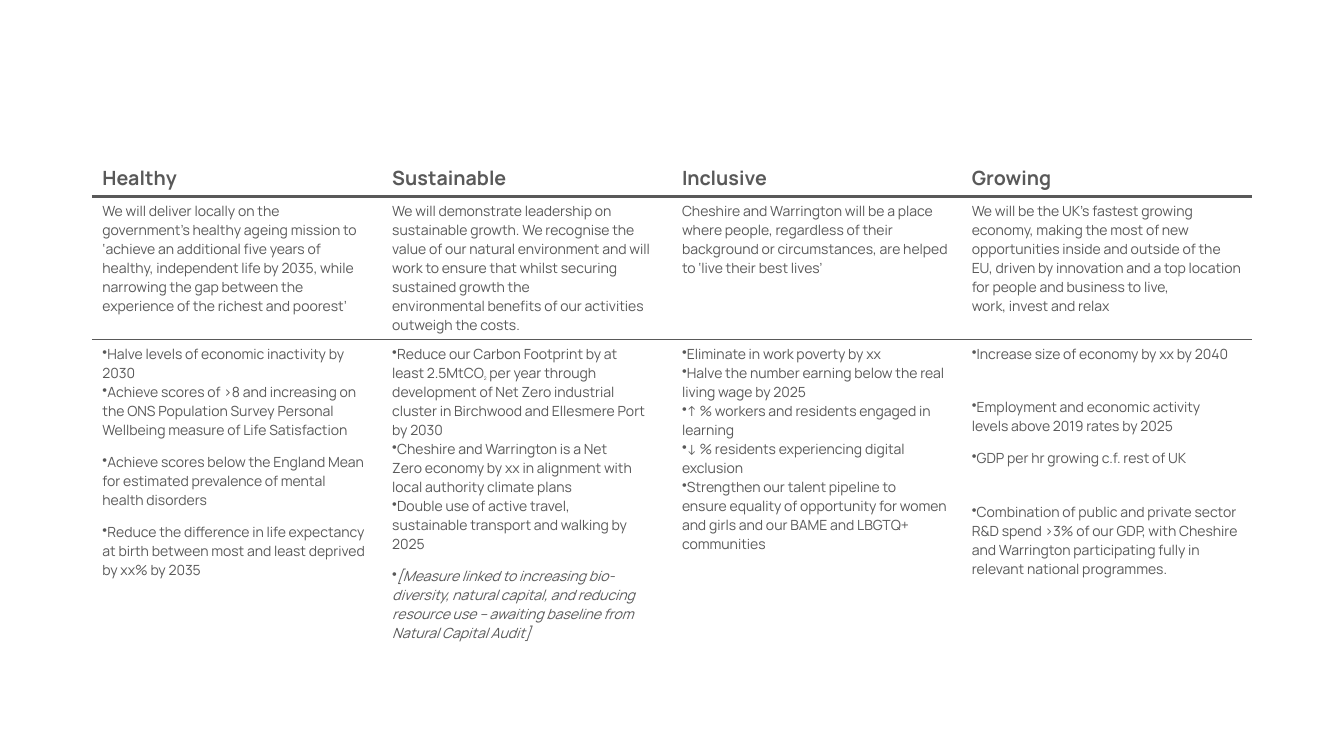
from lxml.etree import SubElement as Sub
from pptx import Presentation
from pptx.dml.color import RGBColor as RGB
from pptx.oxml.ns import qn
from pptx.util import Pt

# Content: "~" is a no-break space, text between bars is subscript
HEADS = ["Healthy", "Sustainable", "Inclusive", "Growing"]
AIMS = [
    "We will deliver locally on the government’s~healthy ageing mission to ‘achieve an additional~five years "
    "of healthy, independent life by 2035,~while narrowing the gap between the experience~of the richest and poorest’",
    "We will demonstrate leadership on sustainable~growth. We recognise the value of our natural~environment "
    "and will work to ensure that whilst~securing sustained growth the environmental~benefits of our activities "
    "outweigh the costs.",
    "Cheshire and Warrington will be a place where~people, regardless of their background or~circumstances, "
    "are helped to ‘live their best lives’",
    "We will be the UK’s fastest growing economy,~making the most of new opportunities inside and~outside of "
    "the EU, driven by innovation and a top~location for people and business to live, work,~invest and relax",
]
NEAR, FAR = 9.2, 24.5  # gaps above a bullet
GOALS = [  # (gap, text) for each bullet
    [
        (0, "Halve levels of economic inactivity by 2030"),
        (0, "Achieve scores of >8 and increasing on the ONS~Population Survey Personal Wellbeing measure~of "
            "Life Satisfaction"),
        (NEAR, "Achieve scores below the England Mean for~estimated prevalence of mental health~disorders"),
        (NEAR, "Reduce the difference in life expectancy at~birth between most and least deprived by xx%~by 2035"),
    ],
    [
        (0, "Reduce our Carbon Footprint by at least~2.5MtCO|2|~per year through development of~Net Zero "
            "industrial cluster in Birchwood and~Ellesmere Port by 2030"),
        (0, "Cheshire and Warrington is a Net Zero~economy by xx in alignment with local~authority climate plans"),
        (0, "Double use of active travel, sustainable~transport and walking by 2025"),
        (NEAR, "[Measure linked to increasing bio-diversity,~natural capital, and reducing resource use –~awaiting "
               "baseline from Natural Capital Audit]"),
    ],
    [
        (0, "Eliminate in work poverty by xx"),
        (0, "Halve the number earning below the real living~wage by 2025"),
        (0, "↑~% workers and residents engaged in learning"),
        (0, "↓ % residents experiencing digital exclusion"),
        (0, "Strengthen our talent pipeline to ensure~equality of opportunity for women and girls~and our BAME "
            "and LBGTQ+ communities"),
    ],
    [
        (0, "Increase size of economy by xx by 2040"),
        (FAR, "Employment and economic activity levels~above 2019 rates by 2025"),
        (NEAR, "GDP per hr growing c.f. rest of UK"),
        (FAR, "Combination of public and private sector R&D~spend >3% of our GDP, with Cheshire and~Warrington "
              "participating fully in relevant~national programmes."),
    ],
]
COLORS = {"ink": "595959", "paper": "FFFFFF"}
FONT = "Manrope"
LEFT, TOP, WIDE = 66, 114, 207
HIGH = [24, 79, 175]
# Horizontal rules from top to bottom: colour, width
RULES = [("paper", 0.92), ("ink", 2.08), ("ink", 0.75), ("paper", 1)]
SIDE = ("paper", 0.92)


def write(para, text, size=10, bold=False, italic=False, bullet=False, gap=0):
    """Fill a paragraph with formatted text."""
    if bullet:
        Sub(para._p.get_or_add_pPr(), qn("a:buChar"), char="•")
    if gap:
        para.space_before = Pt(gap)
    for i, part in enumerate(text.replace("~", chr(160)).split("|")):
        run = para.add_run()
        run.text = part
        font = run.font
        font.name, font.bold, font.italic = FONT, bold, italic
        font.size = Pt(6 if i % 2 else size)
        font.color.rgb = RGB.from_string(COLORS["ink"])
        if i % 2:
            font._element.set("baseline", "-25000")


def edge(cell, row):
    """Draw the four borders of a cell and clear its fill."""
    props = cell._tc.get_or_add_tcPr()
    sides = {"lnL": SIDE, "lnR": SIDE, "lnT": RULES[row], "lnB": RULES[row + 1]}
    for tag, (color, width) in sides.items():
        line = Sub(props, qn("a:" + tag), w=str(int(Pt(width))))
        Sub(Sub(line, qn("a:solidFill")), qn("a:srgbClr"), val=COLORS[color])
    cell.fill.background()


def main():
    deck = Presentation()
    deck.slide_width, deck.slide_height = Pt(960), Pt(540)
    slide = deck.slides.add_slide(deck.slide_layouts[6])

    # Table grid
    table = slide.shapes.add_table(
        len(HIGH), len(HEADS), Pt(LEFT), Pt(TOP), Pt(WIDE * len(HEADS)), Pt(sum(HIGH))
    ).table
    table.first_row = table.horz_banding = False
    for row, high in zip(table.rows, HIGH):
        row.height = Pt(high)

    # One theme per column
    for c, (head, aim, goals) in enumerate(zip(HEADS, AIMS, GOALS)):
        table.columns[c].width = Pt(WIDE)
        cells = [table.cell(r, c) for r in range(len(HIGH))]
        for r, cell in enumerate(cells):
            edge(cell, r)
        write(cells[0].text_frame.paragraphs[0], head, size=14, bold=True)
        write(cells[1].text_frame.paragraphs[0], aim)
        frame = cells[2].text_frame
        for i, (gap, text) in enumerate(goals):
            para = frame.add_paragraph() if i else frame.paragraphs[0]
            write(para, text, bullet=True, gap=gap, italic=text.startswith("["))

    deck.save("out.pptx")


if __name__ == "__main__":
    main()
